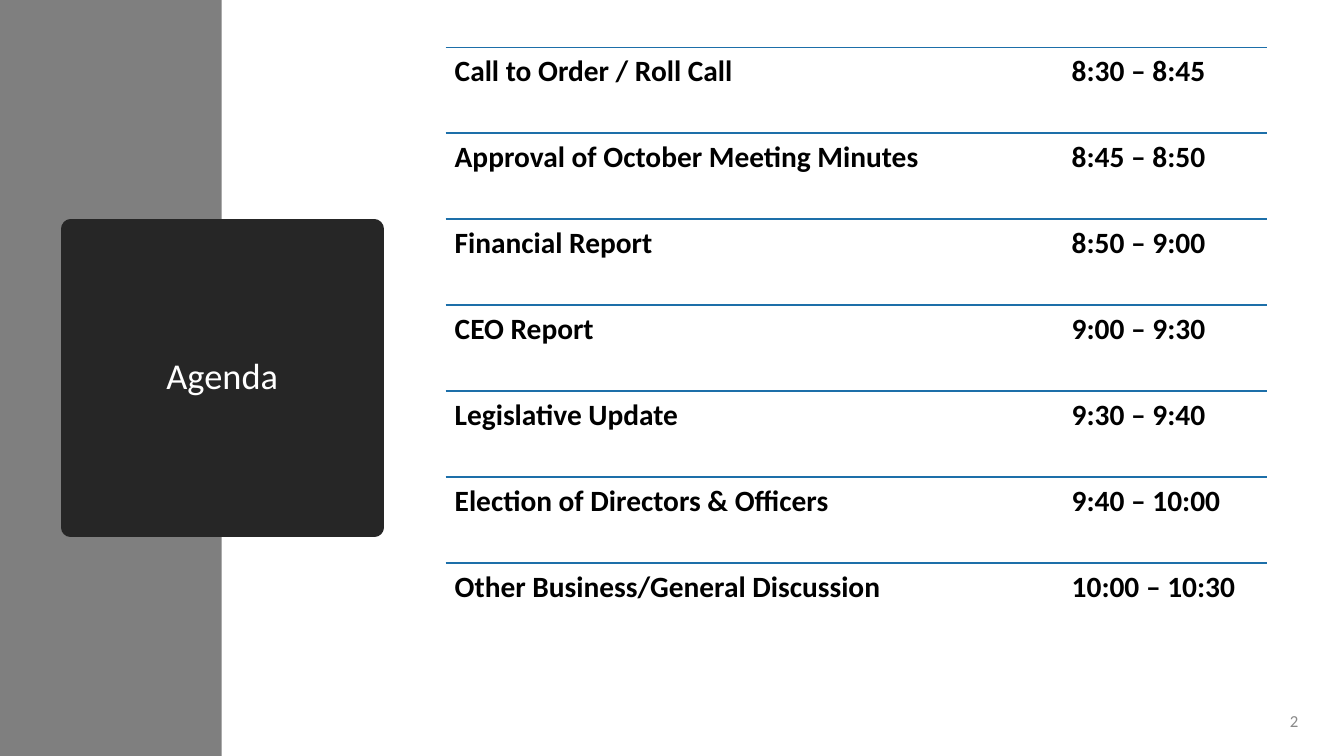
from pptx import Presentation, util as u
from pptx.dml.color import RGBColor
from pptx.enum import shapes, text
from pptx.oxml import parse_xml
from pptx.oxml.ns import nsdecls, qn
from lxml import etree

AGENDA = [
    ("Call to Order / Roll Call", "8:30 – 8:45"),
    ("Approval of October Meeting Minutes", "8:45 – 8:50"),
    ("Financial Report", "8:50 – 9:00"),
    ("CEO Report", "9:00 – 9:30"),
    ("Legislative Update", "9:30 – 9:40"),
    ("Election of Directors & Officers", "9:40 – 10:00"),
    ("Other Business/General Discussion", "10:00 – 10:30"),
]


def tint(color, code):
    color.rgb = RGBColor.from_string(code)


def put(obj, **vals):
    for key, val in vals.items():
        setattr(obj, key, val)


def style(par, size, code, bold=False, **vals):
    put(par, **vals)
    put(par.font, name="Calibri", size=u.Pt(size), bold=bold)
    tint(par.font.color, code)


def cm(*vals):
    return [u.Cm(val) for val in vals]


# Grey band down the left edge
def add_band(slide, x, y, w, h):
    band = slide.shapes.add_shape(shapes.MSO_SHAPE.RECTANGLE, *cm(x, y, w, h))
    band.shadow.inherit = False
    band.fill.solid()
    tint(band.fill.fore_color, "7F7F7F")
    band.line.fill.background()


# Dark title card; its thick outline rounds the corners
def add_title(slide, x, y, w, h):
    card = slide.shapes.title
    left, top, width, height = cm(x, y, w, h)
    put(card, left=left, top=top, width=width, height=height, text="Agenda")
    card.fill.solid()
    tint(card.fill.fore_color, "262626")
    tint(card.line.color, "262626")
    card.line.width = u.Pt(13.75)
    etree.SubElement(card.line._get_or_add_ln(), qn("a:round"))
    put(card.text_frame, word_wrap=True, auto_size=text.MSO_AUTO_SIZE.NONE,
        vertical_anchor=text.MSO_ANCHOR.MIDDLE)
    style(card.text_frame.paragraphs[0], 26, "FFFFFF",
          alignment=text.PP_ALIGN.CENTER, line_spacing=0.9)


# One agenda row: rule on top, topic, then time at a tab stop
def add_row(slide, x, y, w, h, topic, time):
    rule = slide.shapes.add_connector(
        shapes.MSO_CONNECTOR.STRAIGHT, *cm(x, y, x + w, y))
    tint(rule.line.color, "1D6FA9")
    rule.line.width = u.Pt(1)
    etree.SubElement(rule._element.spPr, qn("a:effectLst"))

    frame = slide.shapes.add_textbox(*cm(x, y, w, h)).text_frame
    pad = u.Cm(0.23)
    put(frame, word_wrap=True, margin_left=pad, margin_right=pad,
        margin_top=pad, margin_bottom=pad)
    par = frame.paragraphs[0]
    par.text = f"{topic}\t{time}"
    tabs = etree.SubElement(par._p.get_or_add_pPr(), qn("a:tabLst"))
    etree.SubElement(tabs, qn("a:tab"), pos=str(u.Cm(15.55)), algn="l")
    style(par, 21, "000000", True, line_spacing=0.9)


def add_agenda(slide, x, y, w, h):
    step = h / len(AGENDA)
    for i, (topic, time) in enumerate(AGENDA):
        add_row(slide, x, y + i * step, w, step, topic, time)


# Slide number field
def add_number(slide, x, y, w, h):
    frame = slide.shapes.add_textbox(*cm(x, y, w, h)).text_frame
    put(frame, word_wrap=True, vertical_anchor=text.MSO_ANCHOR.MIDDLE)
    par = frame.paragraphs[0]
    style(par, 12, "898989", alignment=text.PP_ALIGN.RIGHT)
    par._p.append(parse_xml(
        f'<a:fld {nsdecls("a")} id="{{B6F15528-21DE-4FAA-801E-634DDDAF4B2B}}" '
        'type="slidenum"><a:rPr lang="en-US" sz="1200"><a:solidFill>'
        '<a:srgbClr val="898989"/></a:solidFill><a:latin typeface="Calibri"/>'
        '</a:rPr><a:t>2</a:t></a:fld>'))


def main():
    deck = Presentation()
    put(deck, slide_width=u.Cm(33.87), slide_height=u.Cm(19.05))
    # Numbering starts at 2 for this page
    deck.element.set("firstSlideNum", "2")
    slide = deck.slides.add_slide(deck.slide_layouts[5])
    add_band(slide, 0, 0, 5.59, 19.05)
    # Bring the title card in front of the band
    slide.shapes._spTree.append(slide.shapes.title._element)
    add_title(slide, 1.78, 5.77, 7.65, 7.52)
    add_agenda(slide, 11.23, 1.19, 20.7, 15.16)
    add_number(slide, 31.42, 17.65, 1.55, 1.02)
    deck.save("out.pptx")


if __name__ == "__main__":
    main()
